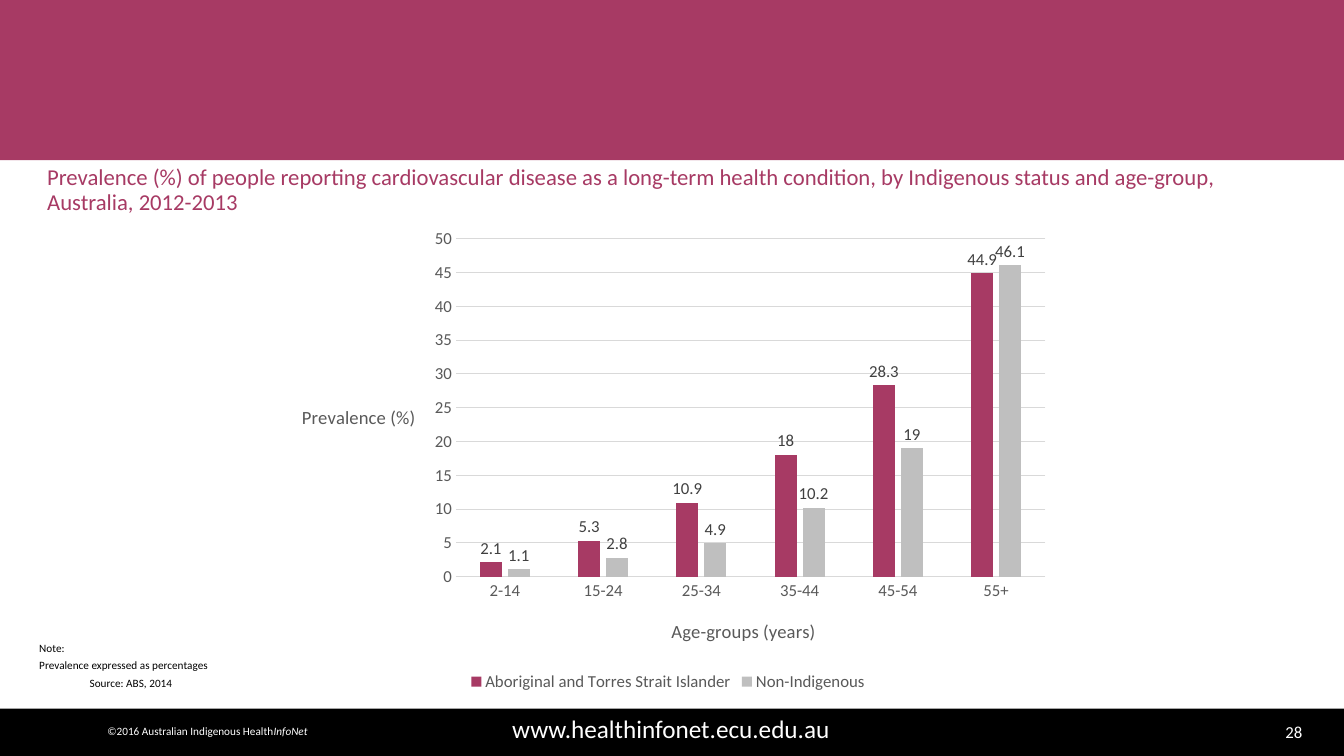
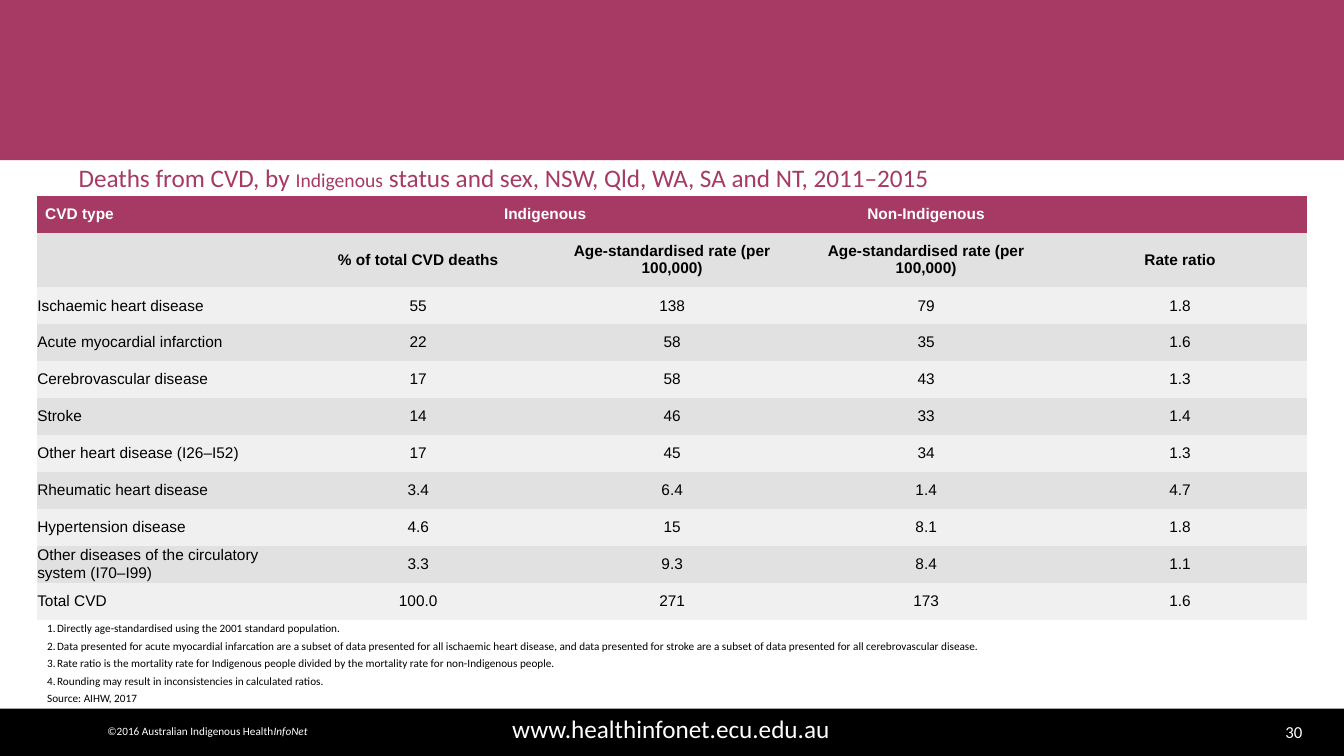
from dataclasses import dataclass

from lxml import etree
from pptx import Presentation
from pptx.chart.data import CategoryChartData
from pptx.dml.color import RGBColor
from pptx.enum.chart import (XL_CHART_TYPE, XL_LABEL_POSITION,
                             XL_LEGEND_POSITION, XL_TICK_MARK)
from pptx.enum.shapes import MSO_SHAPE
from pptx.enum.text import MSO_ANCHOR, PP_ALIGN
from pptx.oxml.ns import qn
from pptx.util import Cm, Pt

RECT = MSO_SHAPE.RECTANGLE
LEFT, MID, RIGHT = PP_ALIGN.LEFT, PP_ALIGN.CENTER, PP_ALIGN.RIGHT
TOP, MIDDLE = MSO_ANCHOR.TOP, MSO_ANCHOR.MIDDLE
COLUMNS = XL_CHART_TYPE.COLUMN_CLUSTERED
BOTTOM = XL_LEGEND_POSITION.BOTTOM
OUTSIDE = XL_LABEL_POSITION.OUTSIDE_END
NO_TICK = XL_TICK_MARK.NONE
PLAIN_GRID = "{2D5ABB26-0587-4C30-8999-92F81FD0307C}"


@dataclass(frozen=True)
class Theme:
    wine: str = "A73A64"
    black: str = "000000"
    white: str = "FFFFFF"
    dark: str = "E1E1E1"
    light: str = "F0F0F0"
    bar: str = "BFBFBF"
    rule: str = "D9D9D9"
    label: str = "404040"
    axis: str = "595959"
    font: str = "Calibri"
    cell_font: str = "Arial"
    note: float = 8
    cell: float = 11
    tick: float = 12
    name: float = 13.3
    web: float = 18


T = Theme()

AGES = ["2-14", "15-24", "25-34", "35-44", "45-54", "55+"]
SERIES = [
    ("Aboriginal and Torres Strait Islander", T.wine,
     [2.1, 5.3, 10.9, 18, 28.3, 44.9]),
    ("Non-Indigenous", T.bar, [1.1, 2.8, 4.9, 10.2, 19, 46.1]),
]
RATE = "Age-standardised rate (per 100,000)"
ROWS = [
    ["CVD type", "Indigenous", "", "Non-Indigenous", ""],
    ["", "% of total CVD deaths", RATE, RATE, "Rate ratio"],
    ["Ischaemic heart disease", "55", "138", "79", "1.8"],
    ["Acute myocardial infarction", "22", "58", "35", "1.6"],
    ["Cerebrovascular disease", "17", "58", "43", "1.3"],
    ["Stroke", "14", "46", "33", "1.4"],
    ["Other heart disease (I26–I52)", "17", "45", "34", "1.3"],
    ["Rheumatic heart disease", "3.4", "6.4", "1.4", "4.7"],
    ["Hypertension disease", "4.6", "15", "8.1", "1.8"],
    ["Other diseases of the circulatory system (I70–I99)",
     "3.3", "9.3", "8.4", "1.1"],
    ["Total CVD", "100.0", "271", "173", "1.6"],
]
NOTES = [
    "Directly age-standardised using the 2001 standard population.",
    "Data presented for acute myocardial infarcation are a subset of data "
    "presented for all ischaemic heart disease, and data presented for "
    "stroke are a subset of data presented for all cerebrovascular disease.",
    "Rate ratio is the mortality rate for Indigenous people divided by the "
    "mortality rate for non-Indigenous people.",
    "Rounding may result in inconsistencies in calculated ratios.",
]


def rgb(code):
    return RGBColor.from_string(code)


def style(font, size, color, face=T.font, bold=False):
    font.size, font.name, font.bold = Pt(size), face, bold
    font.color.rgb = rgb(color)


def add_text(slide, box, lines, size, color, align=LEFT, anchor=TOP,
             wrap=True):
    """Each line is a list of (words, size or None, italic) runs."""
    frame = slide.shapes.add_textbox(*map(Cm, box)).text_frame
    frame.word_wrap, frame.vertical_anchor = wrap, anchor
    for i, runs in enumerate(lines):
        para = frame.paragraphs[0] if i == 0 else frame.add_paragraph()
        para.alignment = align
        for words, own, slant in runs:
            run = para.add_run()
            run.text = words
            style(run.font, own or size, color)
            run.font.italic = slant
    return frame.paragraphs


def add_line(slide, box, words, size, color, **kind):
    return add_text(slide, box, [[(words, None, False)]], size, color, **kind)


def add_title(slide, box, runs, size):
    paras = add_text(slide, box, [runs], size, T.wine, anchor=MIDDLE)
    paras[0].line_spacing = 0.9


def add_notes(slide, box, lines):
    paras = add_text(slide, box, [[(line, None, False)] for line in lines],
                     T.note, T.black)
    for para in paras[:-1]:
        para.space_after = Pt(3)
    return paras


def indent(para, left, hang=0, numbered=False):
    props = para._p.get_or_add_pPr()
    props.set("marL", str(Cm(left)))
    props.set("indent", str(-Cm(hang)))
    if numbered:
        etree.SubElement(props, qn("a:buAutoNum"), type="arabicPeriod")


def add_band(slide, box, color):
    band = slide.shapes.add_shape(RECT, *map(Cm, box))
    band.shadow.inherit = False
    band.fill.solid()
    band.fill.fore_color.rgb = rgb(color)
    band.line.fill.background()


def add_page(deck, number):
    """Blank slide with the shared bands and footer."""
    slide = deck.slides.add_slide(deck.slide_layouts[6])
    add_band(slide, (-0.08, 0, 33.95, 4.04), T.wine)
    add_band(slide, (0, 17.86, 33.87, 1.19), T.black)
    add_line(slide, (30.35, 18.06, 2.72, 0.76), str(number), T.tick, T.white,
             align=RIGHT)
    add_line(slide, (1.57, 17.86, 30.68, 1), "www.healthinfonet.ecu.edu.au",
             T.web, T.white, align=MID)
    add_text(slide, (2.41, 18.14, 5.64, 0.6),
             [[("©2016 Australian Indigenous Health", None, False),
               ("InfoNet", None, True)]],
             T.note, T.white, align=MID, wrap=False)
    return slide


def place(node, spot, index=0, inner=False):
    """Fix a chart part at fractions of the chart area."""
    layout = node.find(qn("c:layout"))
    if layout is None:
        layout = etree.Element(qn("c:layout"))
        node.insert(index, layout)
    manual = etree.SubElement(layout, qn("c:manualLayout"))
    if inner:
        etree.SubElement(manual, qn("c:layoutTarget"), val="inner")
    for key in "xy":
        etree.SubElement(manual, qn(f"c:{key}Mode"), val="edge")
    for key, value in zip("xywh", spot):
        etree.SubElement(manual, qn(f"c:{key}"), val=str(value))


def set_axis(axis, words, spot):
    axis.major_tick_mark = axis.minor_tick_mark = NO_TICK
    style(axis.tick_labels.font, T.tick, T.axis)
    frame = axis.axis_title.text_frame
    frame.text = words
    style(frame.paragraphs[0].runs[0].font, T.name, T.axis)
    frame._txBody.find(qn("a:bodyPr")).set("rot", "0")
    place(axis.axis_title._element, spot, 1)


def set_rule(line):
    line.width = Pt(0.75)
    line.color.rgb = rgb(T.rule)


def add_bars(slide, box):
    data = CategoryChartData()
    data.categories = AGES
    for name, _, values in SERIES:
        data.add_series(name, values)
    chart = slide.shapes.add_chart(COLUMNS, *map(Cm, box), data).chart
    style(chart.font, T.tick, T.axis)
    chart.has_title = False
    chart.has_legend = True
    chart.legend.position = BOTTOM
    chart.legend.include_in_layout = False
    style(chart.legend.font, T.tick, T.axis)

    # Axes and plot area
    ages, share = chart.category_axis, chart.value_axis
    set_axis(ages, "Age-groups (years)", (0.5, 0.83))
    set_axis(share, "Prevalence (%)", (0.03, 0.38))
    set_rule(ages.format.line)
    set_rule(share.major_gridlines.format.line)
    share.format.line.fill.background()
    share.minimum_scale, share.maximum_scale, share.major_unit = 0, 50, 5
    area = chart._chartSpace.find(".//" + qn("c:plotArea"))
    place(area, (0.23, 0.04, 0.75, 0.71), inner=True)

    # Bars and their labels
    plot = chart.plots[0]
    plot.vary_by_categories = False
    plot.gap_width, plot.overlap = 219, -27
    for bars, (_, color, _) in zip(plot.series, SERIES):
        bars.format.fill.solid()
        bars.format.fill.fore_color.rgb = rgb(color)
        labels = bars.data_labels
        labels.show_value, labels.position = True, OUTSIDE
        style(labels.font, T.tick, T.label)


def fill_cell(cell, words, row, col):
    shade = T.wine if row == 0 else T.dark if row % 2 else T.light
    cell.fill.solid()
    cell.fill.fore_color.rgb = rgb(shade)
    cell.vertical_anchor = MIDDLE
    cell.margin_top = cell.margin_bottom = 0
    cell.margin_left = cell.margin_right = Cm(0.2 if col or row == 0 else 0)
    cell.text = words
    para = cell.text_frame.paragraphs[0]
    para.alignment = MID if col else LEFT
    for run in para.runs:
        style(run.font, T.cell, T.black if row else T.white,
              T.cell_font, row < 2)


def add_grid(slide, left, top, wide, high, tall):
    count = len(ROWS[0])
    size = Cm(wide * count), Cm(high * (len(ROWS) - 1) + tall)
    table = slide.shapes.add_table(len(ROWS), count, Cm(left), Cm(top),
                                   *size).table
    table._tbl.tblPr.find(qn("a:tableStyleId")).text = PLAIN_GRID
    for col in table.columns:
        col.width = Cm(wide)
    for r, words in enumerate(ROWS):
        table.rows[r].height = Cm(tall if r == 1 else high)
        for c, word in enumerate(words):
            fill_cell(table.cell(r, c), word, r, c)
    table.cell(0, 1).merge(table.cell(0, 2))


def add_ages(deck):
    slide = add_page(deck, 28)
    words = ("Prevalence (%) of people reporting cardiovascular disease as a "
             "long-term health condition, by Indigenous status and age-group, "
             "Australia, 2012-2013")
    add_title(slide, (0.94, 4.11, 32, 1.4), [(words, None, False)], 16.2)
    paras = add_notes(slide, (0.74, 16.03, 16.94, 1.5),
                      ["Note:", "Prevalence expressed as percentages",
                       "Source: ABS, 2014"])
    indent(paras[-1], 1.27)
    add_bars(slide, (6.93, 5.54, 19.81, 11.99))


def add_deaths(deck):
    slide = add_page(deck, 30)
    add_title(slide, (1.73, 3.73, 30.43, 1.6),
              [("Deaths from CVD, by ", None, False),
               ("Indigenous", 14, False),
               (" status and sex, NSW, Qld, WA, SA and NT, 2011–2015",
                None, False)], 18)
    add_grid(slide, 0.94, 4.93, 6.4, 0.93, 1.38)
    paras = add_notes(slide, (0.94, 15.53, 30.94, 2.4),
                      NOTES + ["Source: AIHW, 2017"])
    for para in paras[:-1]:
        indent(para, 0.25, 0.25, numbered=True)


def main():
    deck = Presentation()
    deck.slide_width, deck.slide_height = Cm(33.87), Cm(19.05)
    add_ages(deck)
    add_deaths(deck)
    deck.save("out.pptx")


if __name__ == "__main__":
    main()
